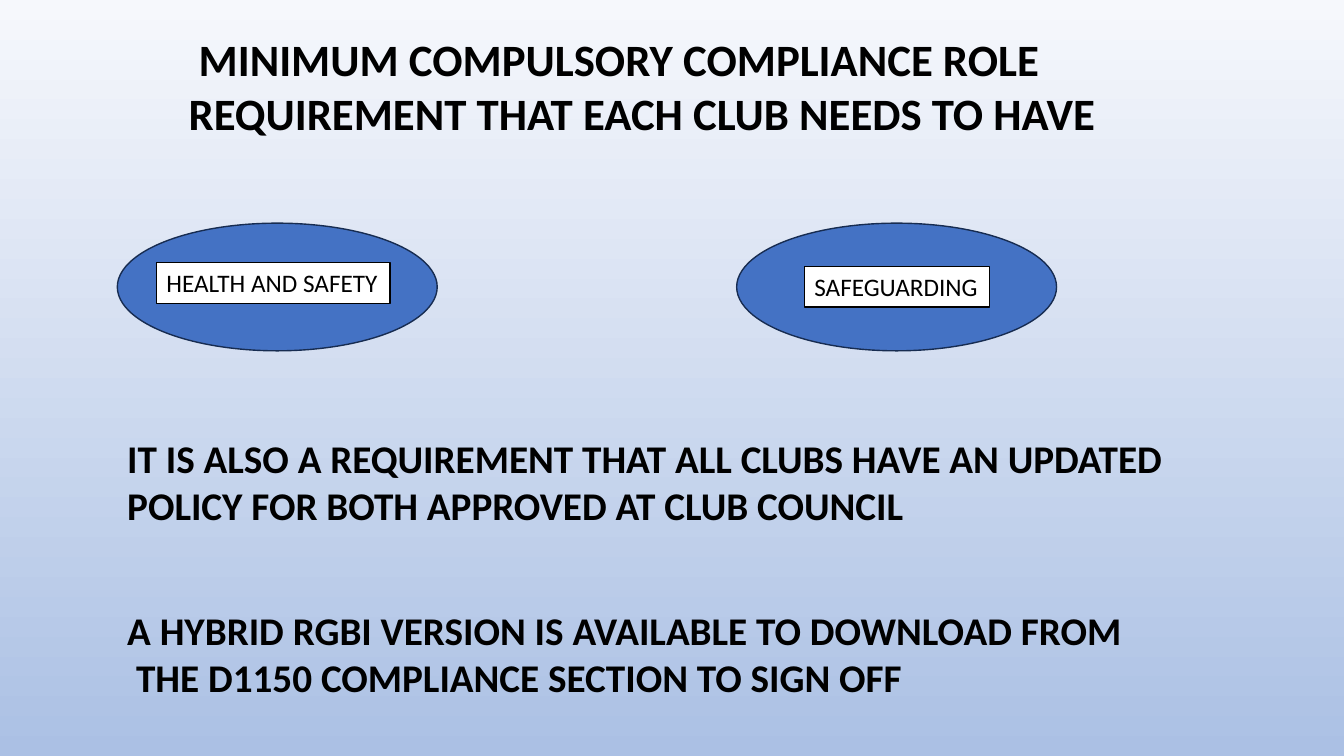
"""Build the slide on the compulsory compliance roles of a club."""
from dataclasses import dataclass

from pptx import Presentation
from pptx.dml.color import RGBColor
from pptx.enum.shapes import MSO_SHAPE
from pptx.enum.text import MSO_ANCHOR, MSO_AUTO_SIZE, PP_ALIGN
from pptx.shapes.autoshape import Shape
from pptx.slide import Slide
from pptx.util import Pt


@dataclass(frozen=True)
class Theme:
    font: str = "Calibri"
    title_size: float = 32
    body_size: float = 28
    label_size: float = 18
    ink: RGBColor = RGBColor(0x00, 0x00, 0x00)
    paper: RGBColor = RGBColor(0xFF, 0xFF, 0xFF)
    oval_fill: RGBColor = RGBColor(0x44, 0x72, 0xC4)
    oval_line: RGBColor = RGBColor(0x17, 0x2C, 0x51)
    sky_top: RGBColor = RGBColor(0xF6, 0xF8, 0xFC)
    sky_bottom: RGBColor = RGBColor(0xAB, 0xC0, 0xE4)
    line_width: float = 1


@dataclass(frozen=True)
class Area:
    left: float
    top: float
    width: float
    height: float

    def lengths(self) -> tuple[Pt, Pt, Pt, Pt]:
        return Pt(self.left), Pt(self.top), Pt(self.width), Pt(self.height)


@dataclass(frozen=True)
class Role:
    name: str
    oval: Area
    label: Area


@dataclass(frozen=True)
class Statement:
    text: str
    area: Area


THEME = Theme()
TITLE = Statement(
    " MINIMUM COMPULSORY COMPLIANCE ROLE\nREQUIREMENT THAT EACH CLUB NEEDS TO HAVE",
    Area(127.5, 18.9, 670.5, 84.8),
)
ROLES = (
    Role("HEALTH AND SAFETY", Area(83.8, 159.4, 228.5, 91.2), Area(111.8, 187.5, 166.8, 29.1)),
    Role("SAFEGUARDING", Area(526.2, 159.4, 228.5, 91.2), Area(574.6, 190.3, 132.2, 29.1)),
)
STATEMENTS = (
    Statement(
        "IT IS ALSO A REQUIREMENT THAT ALL CLUBS HAVE AN UPDATED\n"
        "POLICY FOR BOTH APPROVED AT CLUB COUNCIL",
        Area(83.8, 306.8, 762.5, 75.1),
    ),
    Statement(
        "A HYBRID RGBI VERSION IS AVAILABLE TO DOWNLOAD FROM\n"
        " THE D1150 COMPLIANCE SECTION TO SIGN OFF",
        Area(83.8, 429.8, 733, 75.1),
    ),
)


def paint_background(page: Slide) -> None:
    fill = page.background.fill
    fill.gradient()
    fill.gradient_angle = 270
    for stop, color, position in zip(
        fill.gradient_stops, (THEME.sky_top, THEME.sky_bottom), (0, 1)
    ):
        stop.color.rgb = color
        stop.position = position


def write_text(box: Shape, text: str, size: float, bold: bool) -> None:
    frame = box.text_frame
    frame.text = text
    frame.word_wrap = False
    frame.auto_size = MSO_AUTO_SIZE.SHAPE_TO_FIT_TEXT
    frame.vertical_anchor = MSO_ANCHOR.TOP
    for para in frame.paragraphs:
        para.alignment = PP_ALIGN.LEFT
        para.line_spacing = 1.0
        para.space_before = Pt(0)
        for span in para.runs:
            span.font.name = THEME.font
            span.font.size = Pt(size)
            span.font.bold = bold
            span.font.color.rgb = THEME.ink


def paint_shape(shape: Shape, fill: RGBColor, line: RGBColor) -> None:
    shape.shadow.inherit = False
    shape.fill.solid()
    shape.fill.fore_color.rgb = fill
    shape.line.color.rgb = line
    shape.line.width = Pt(THEME.line_width)


def draw_title(page: Slide, title: Statement) -> None:
    box = page.shapes.title
    box.left, box.top, box.width, box.height = title.area.lengths()
    write_text(box, title.text, THEME.title_size, True)


def draw_role(page: Slide, role: Role) -> None:
    group = page.shapes.add_group_shape()
    oval = group.shapes.add_shape(MSO_SHAPE.OVAL, *role.oval.lengths())
    paint_shape(oval, THEME.oval_fill, THEME.oval_line)
    label = group.shapes.add_shape(MSO_SHAPE.RECTANGLE, *role.label.lengths())
    paint_shape(label, THEME.paper, THEME.ink)
    write_text(label, role.name, THEME.label_size, False)


def draw_statement(page: Slide, statement: Statement) -> None:
    box = page.shapes.add_textbox(*statement.area.lengths())
    write_text(box, statement.text, THEME.body_size, True)


def main() -> None:
    deck = Presentation()
    deck.slide_width, deck.slide_height = Pt(960), Pt(540)
    page = deck.slides.add_slide(deck.slide_layouts.get_by_name("Title Only"))
    paint_background(page)
    draw_title(page, TITLE)
    for role in ROLES:
        draw_role(page, role)
    for statement in STATEMENTS:
        draw_statement(page, statement)
    deck.save("out.pptx")


if __name__ == "__main__":
    main()
